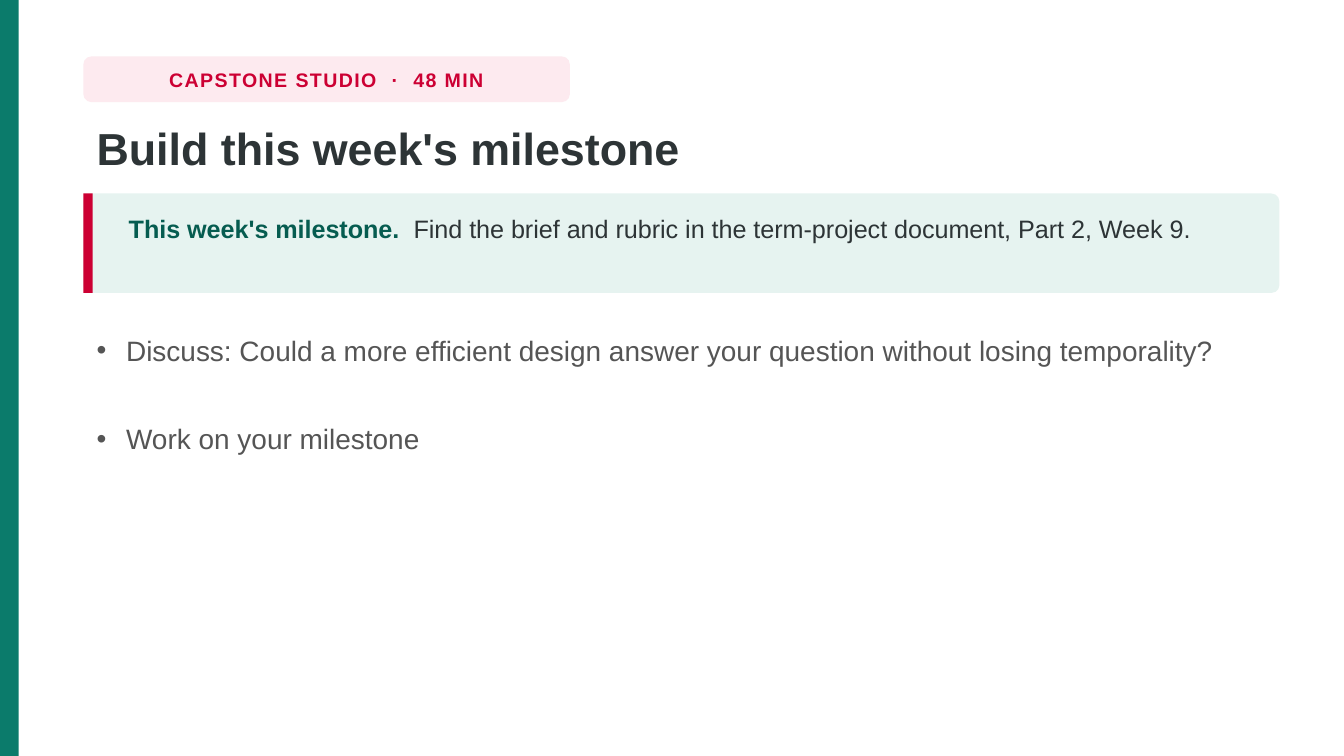
import pptx
import pptx.util
import pptx.dml.color
import pptx.enum.shapes
import pptx.enum.text
import pptx.oxml.ns
from lxml import etree

Inches, Pt = pptx.util.Inches, pptx.util.Pt
RGB = pptx.dml.color.RGBColor
SHAPE = pptx.enum.shapes.MSO_SHAPE
ALIGN = pptx.enum.text.PP_ALIGN
ANCHOR = pptx.enum.text.MSO_ANCHOR

FONT = "Arial"
GREEN, DARK_GREEN, PALE_GREEN = RGB(0x0B, 0x7B, 0x6B), RGB(0x06, 0x5C, 0x50), RGB(0xE6, 0xF3, 0xF0)
RED, PALE_RED = RGB(0xCC, 0x00, 0x33), RGB(0xFD, 0xEA, 0xEF)
INK, GREY = RGB(0x2D, 0x34, 0x36), RGB(0x55, 0x55, 0x55)

# Content
TAG = "CAPSTONE STUDIO  ·  48 MIN"
TITLE = "Build this week's milestone"
CALLOUT_LEAD = "This week's milestone.  "
CALLOUT_BODY = "Find the brief and rubric in the term-project document, Part 2, Week 9."
BULLETS = [  # text, height reserved
    ("Discuss: Could a more efficient design answer your question without losing temporality?", 0.58),
    ("Work on your milestone", 0.31),
]

# Layout in inches, on a 16:9 slide
WIDTH = 10
HEIGHT = WIDTH * 9 / 16
LEFT, COLUMN = 0.62, 8.9
RADIUS = 0.06
TAG_BOX = (LEFT, 0.42, 3.62, 0.34)
TITLE_BOX = (LEFT, 0.84, COLUMN, 0.56)
CALLOUT_BOX = (LEFT, 1.44, COLUMN, 0.74)
CALLOUT_TEXT_BOX = (LEFT + 0.24, 1.51, COLUMN - 0.5, 0.6)
BULLET_TOP, BULLET_GAP, INDENT = 2.4, 0.08, 0.22

prs = pptx.Presentation()
prs.slide_width, prs.slide_height = Inches(WIDTH), Inches(HEIGHT)
s = prs.slides.add_slide(prs.slide_layouts[6])


def add_block(box, color, rounded=False):
    kind = SHAPE.ROUNDED_RECTANGLE if rounded else SHAPE.RECTANGLE
    sp = s.shapes.add_shape(kind, *map(Inches, box))
    if rounded:
        sp.adjustments[0] = RADIUS / box[3]
    sp.fill.solid()
    sp.fill.fore_color.rgb = color
    sp.line.fill.background()
    sp.shadow.inherit = False


def add_text(box, *runs, size, line=None, align=None, anchor=ANCHOR.TOP,
             wrap=True, spacing=None, bullet=False):
    """Each run is a tuple of text, colour and bold."""
    tf = s.shapes.add_textbox(*map(Inches, box)).text_frame
    tf.word_wrap = wrap
    tf.vertical_anchor = anchor
    p = tf.paragraphs[0]
    p.alignment = align
    p.line_spacing = line
    if bullet:
        props = p._p.get_or_add_pPr()
        props.set("marL", str(Inches(INDENT)))
        props.set("indent", str(-Inches(INDENT)))
        etree.SubElement(props, pptx.oxml.ns.qn("a:buFont"), typeface=FONT)
        etree.SubElement(props, pptx.oxml.ns.qn("a:buChar"), char="•")
    p.font.name, p.font.size = FONT, Pt(size)
    for text, color, bold in runs:
        r = p.add_run()
        r.text = text
        r.font.name, r.font.size, r.font.bold = FONT, Pt(size), bold
        r.font.color.rgb = color
        if spacing:
            r.font._element.set("spc", str(round(spacing * 100)))


# Side band
add_block((0, 0, 0.14, HEIGHT), GREEN)

# Tag and title
add_block(TAG_BOX, PALE_RED, rounded=True)
add_text(TAG_BOX, (TAG, RED, True), size=10.5, align=ALIGN.CENTER,
         anchor=ANCHOR.MIDDLE, wrap=False, spacing=0.8)
add_text(TITLE_BOX, (TITLE, INK, True), size=24, line=1.02)

# Callout with accent bar
add_block(CALLOUT_BOX, PALE_GREEN, rounded=True)
add_block((*CALLOUT_BOX[:2], 0.07, CALLOUT_BOX[3]), RED)
add_text(CALLOUT_TEXT_BOX, (CALLOUT_LEAD, DARK_GREEN, True), (CALLOUT_BODY, INK, False),
         size=13.5, line=1.14)

# Bullets, stacked with an equal gap
top = BULLET_TOP
for text, height in BULLETS:
    add_text((LEFT, top, COLUMN, height), (text, GREY, False), size=15, line=1.12, bullet=True)
    top += height + BULLET_GAP

prs.save("out.pptx")
